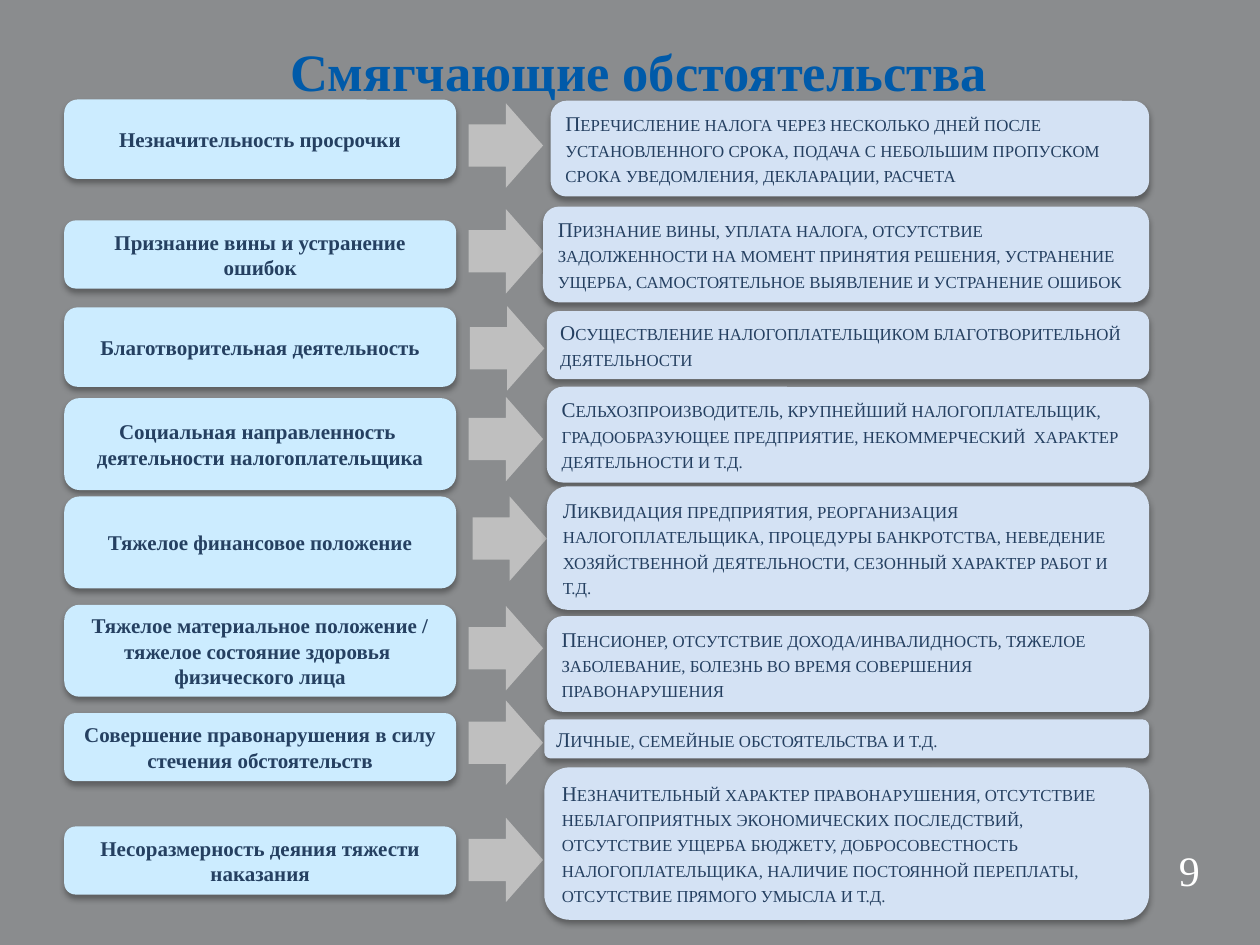
from lxml import etree
from pptx import Presentation
from pptx.dml.color import RGBColor
from pptx.enum.shapes import MSO_SHAPE
from pptx.enum.text import MSO_ANCHOR, PP_ALIGN
from pptx.oxml.ns import qn
from pptx.util import Inches, Pt

ROUND = MSO_SHAPE.FLOWCHART_ALTERNATE_PROCESS
ARROW = MSO_SHAPE.RIGHT_ARROW
MIDDLE = MSO_ANCHOR.MIDDLE
LEFT, CENTER = PP_ALIGN.LEFT, PP_ALIGN.CENTER

GREY = RGBColor(0x8A, 0x8C, 0x8E)
SILVER = RGBColor(0xBF, 0xBF, 0xBF)
SKY = RGBColor(0xCC, 0xEC, 0xFF)
PALE = RGBColor(0xD4, 0xE2, 0xF4)
NAVY = RGBColor(0x25, 0x40, 0x61)
BLUE = RGBColor(0x00, 0x5A, 0xA9)
WHITE = RGBColor(0xFF, 0xFF, 0xFF)
FONT = "Times New Roman"

# Columns shared by all rows
CAUSE_X, CAUSE_W = 0.51, 3.11
ARROW_W, ARROW_H = 0.59, 0.67
EDGE = 9.12

# Each row: cause (top, height, text), arrow (left, top),
# detail (left, top, height, text)
ROWS = [
    ((0.79, 0.63, "Незначительность просрочки"),
     (3.72, 0.82),
     (4.37, 0.8, 0.76,
      "Перечисление налога через несколько дней после установленного "
      "срока, подача с небольшим пропуском срока уведомления, "
      "декларации, расчета")),
    ((1.75, 0.54, "Признание вины и устранение ошибок"),
     (3.72, 1.66),
     (4.31, 1.64, 0.76,
      "Признание вины, уплата налога, отсутствие задолженности на момент "
      "принятия решения, устранение ущерба, самостоятельное выявление "
      "и устранение ошибок")),
    ((2.44, 0.63, "Благотворительная деятельность"),
     (3.73, 2.43),
     (4.34, 2.47, 0.54,
      "Осуществление налогоплательщиком благотворительной деятельности")),
    ((3.16, 0.73,
      "Социальная направленность \nдеятельности налогоплательщика"),
     (3.72, 3.15),
     (4.34, 3.07, 0.76,
      "Сельхозпроизводитель, крупнейший налогоплательщик, "
      "градообразующее предприятие, некоммерческий  характер "
      "деятельности и т.д.")),
    ((3.94, 0.73, "Тяжелое финансовое положение"),
     (3.75, 3.94),
     (4.34, 3.86, 0.98,
      "Ликвидация предприятия, реорганизация налогоплательщика, "
      "процедуры банкротства, неведение хозяйственной деятельности, "
      "сезонный характер работ и т.д.")),
    ((4.8, 0.73,
      "Тяжелое материальное положение /\n"
      "тяжелое состояние здоровья \nфизического лица"),
     (3.72, 4.81),
     (4.34, 4.89, 0.76,
      "Пенсионер, отсутствие дохода/инвалидность, тяжелое заболевание, "
      "болезнь во время совершения правонарушения")),
    ((5.66, 0.54, "Совершение правонарушения в силу стечения обстоятельств"),
     (3.72, 5.56),
     (4.32, 5.71, 0.31, "Личные, семейные обстоятельства и т.д.")),
    ((6.56, 0.54, "Несоразмерность деяния тяжести наказания"),
     (3.72, 6.49),
     (4.32, 6.09, 1.21,
      "Незначительный характер правонарушения, отсутствие неблагоприятных "
      "экономических последствий, отсутствие ущерба бюджету, "
      "добросовестность налогоплательщика, наличие постоянной переплаты, "
      "отсутствие прямого умысла и т.д.")),
]


def write(shape, text, size=12, color=NAVY, bold=False, align=CENTER,
          small=False, pad=(0.08, 0.04), wrap=True, pitch=None):
    """Fill a shape with text, one paragraph for each line."""
    frame = shape.text_frame
    frame.word_wrap = wrap
    frame.vertical_anchor = MIDDLE
    frame.margin_left = frame.margin_right = Inches(pad[0])
    frame.margin_top = frame.margin_bottom = Inches(pad[1])
    for i, line in enumerate(text.split("\n")):
        para = frame.add_paragraph() if i else frame.paragraphs[0]
        para.alignment = align
        if pitch:
            para.line_spacing = Pt(pitch)
        run = para.add_run()
        run.text = line
        font = run.font
        font.name, font.size, font.bold = FONT, Pt(size), bold
        font.color.rgb = color
        if small:
            run._r.get_or_add_rPr().set("cap", "small")


def shade(shape):
    """Add a soft shadow that falls straight down."""
    effects = shape._element.spPr.find(qn("a:effectLst"))
    outer = etree.SubElement(
        effects, qn("a:outerShdw"), blurRad=str(Pt(3.5)),
        dist=str(Pt(2.2)), dir="5400000", rotWithShape="0")
    tint = etree.SubElement(outer, qn("a:srgbClr"), val="000000")
    etree.SubElement(tint, qn("a:alpha"), val="32000")


def block(slide, kind, fill, left, top, width, height):
    shape = slide.shapes.add_shape(
        kind, Inches(left), Inches(top), Inches(width), Inches(height))
    shape.shadow.inherit = False
    shape.fill.solid()
    shape.fill.fore_color.rgb = fill
    shape.line.fill.background()
    return shape


def label(slide, text, left, top, width, height, **style):
    box = slide.shapes.add_textbox(
        Inches(left), Inches(top), Inches(width), Inches(height))
    write(box, text, **style)


def add_row(slide, cause, arrow, detail):
    """Place a cause, its arrow and the detail that explains it."""
    top, height, text = cause
    box = block(slide, ROUND, SKY, CAUSE_X, top, CAUSE_W, height)
    shade(box)
    write(box, text, bold=True)

    block(slide, ARROW, SILVER, *arrow, ARROW_W, ARROW_H)

    left, top, height, text = detail
    box = block(slide, ROUND, PALE, left, top, EDGE - left, height)
    shade(box)
    write(box, text, align=LEFT, small=True)


def main():
    deck = Presentation()
    deck.slide_width, deck.slide_height = Inches(10), Inches(7.5)
    slide = deck.slides.add_slide(deck.slide_layouts[6])
    back = slide.background.fill
    back.solid()
    back.fore_color.rgb = GREY

    # Title and page number
    label(slide, "Смягчающие обстоятельства", 0.65, 0.25, 8.84, 0.62,
          size=30, color=BLUE, bold=True, pad=(0.12, 0.06))
    label(slide, "9", 9.1, 6.61, 0.68, 0.69,
          size=24, color=WHITE, pad=(0.1, 0.05), pitch=21)

    # Causes and details
    for row in ROWS:
        add_row(slide, *row)

    deck.save("out.pptx")


if __name__ == "__main__":
    main()
